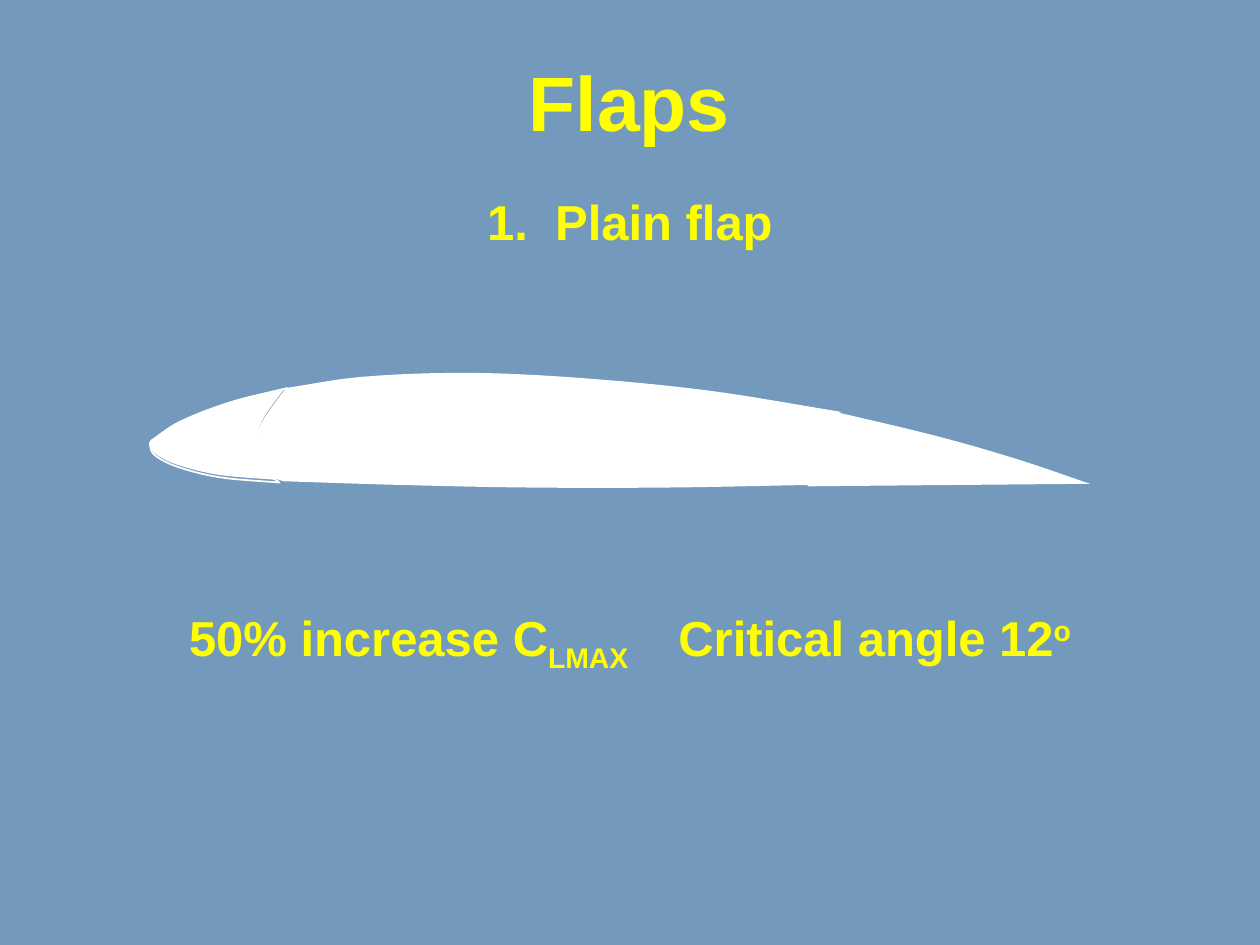
from pptx import Presentation
from pptx.util import Inches, Pt
from pptx.dml.color import RGBColor
from pptx.enum.text import PP_ALIGN as Align, MSO_AUTO_SIZE as Auto

BLUE, WHITE, YELLOW = "739ABC", "FFFFFF", "FFFF00"
STEPS = 8  # short lines drawn between two knots of a curve
color = RGBColor.from_string

deck = Presentation()
deck.slide_width, deck.slide_height = Inches(10), Inches(7.5)
slide = deck.slides.add_slide(deck.slide_layouts[6])
slide.background.fill.solid()
slide.background.fill.fore_color.rgb = color(BLUE)


def curve(knots):
    """Points on a smooth Catmull-Rom curve that passes through the knots."""
    # Mirror the second knot at each end, so the end spans have neighbours
    first = [2 * a - b for a, b in zip(knots[0], knots[1])]
    last = [2 * a - b for a, b in zip(knots[-1], knots[-2])]
    chain = [first, *knots, last]
    points = []
    for span in zip(chain, chain[1:], chain[2:], chain[3:]):
        for step in range(STEPS):
            t = step / STEPS
            points.append([
                b + t * (c - a) / 2
                + t ** 2 * (2 * a - 5 * b + 4 * c - d) / 2
                + t ** 3 * (3 * b - a - 3 * c + d) / 2
                for a, b, c, d in zip(*span)
            ])
    return points + [knots[-1]]


def label(left, top, width, height, size, parts, wrap=True):
    """Centred yellow text; each part is a text with its run attributes."""
    box = slide.shapes.add_textbox(Inches(left), Inches(top), Inches(width), Inches(height))
    frame = box.text_frame
    frame.word_wrap = wrap
    frame.auto_size = Auto.SHAPE_TO_FIT_TEXT
    para = frame.paragraphs[0]
    para.alignment = Align.CENTER
    for text, marks in parts:
        run = para.add_run()
        run.text = text
        font = run.font
        font.name, font.size, font.bold = "Arial", Pt(size), True
        font.color.rgb = color(YELLOW)
        for key, value in marks.items():
            font._element.set(key, value)
    return para


# Nose: upper skin, rounded joint to the body, lower skin
nose_top = [(1.2, 3.49), (1.43, 3.34), (1.82, 3.19), (2.26, 3.08)]
nose_joint = [(2.26, 3.08), (2.08, 3.34), (2.02, 3.57), (2.07, 3.71), (2.2, 3.81)]
nose_low = [(2.2, 3.81), (1.74, 3.77), (1.41, 3.69), (1.23, 3.6), (1.19, 3.52), (1.2, 3.49)]
nose = curve(nose_top) + curve(nose_joint) + curve(nose_low)

# Rim: the nose stretched a little from its top left corner
left, top = 1.19, 3.08
wide, high = 1.09 / 1.07, 0.75 / 0.73
rim = [(left + (x - left) * wide, top + (y - top) * high) for x, y in nose]

# Body: upper skin, hollow for the flap, lower skin, front face
body_top = [(2.27, 3.08), (2.89, 2.99), (3.72, 2.96), (4.6, 3), (5.62, 3.1), (6.68, 3.27)]
body_back = [(6.68, 3.27), (6.42, 3.37), (6.29, 3.6), (6.4, 3.85)]
body_low = [(6.4, 3.85), (5.3, 3.87), (4.2, 3.87), (3.2, 3.85), (2.25, 3.82)]
body_front = [(2.25, 3.82), (2.07, 3.75), (2.01, 3.58), (2.08, 3.35), (2.27, 3.08)]
body = curve(body_top) + curve(body_back) + curve(body_low) + curve(body_front)

# Flap: upper skin down to the tail, flat lower skin, rounded hinge
flap_top = [(6.55, 3.25), (7.43, 3.46), (8.09, 3.65), (8.65, 3.84)]
flap_low = [(8.65, 3.84), (7.5, 3.85), (6.42, 3.86)]
flap_hinge = [(6.42, 3.86), (6.29, 3.77), (6.25, 3.64), (6.32, 3.4), (6.55, 3.25)]
flap = curve(flap_top) + curve(flap_low) + curve(flap_hinge)

# Draw the wing: solid parts, and the rim as a thin line
for part in (body, nose, rim, flap):
    dots = [(Inches(x), Inches(y)) for x, y in part]
    pen = slide.shapes.build_freeform(*dots[0])
    pen.add_line_segments(dots[1:], close=True)
    shape = pen.convert_to_shape()
    shape.shadow.inherit = False
    if part is rim:
        shape.fill.background()
        shape.line.color.rgb = color(WHITE)
        shape.line.width = Pt(1)
    else:
        shape.fill.solid()
        shape.fill.fore_color.rgb = color(WHITE)
        shape.line.fill.background()

# Title, flap type and figures
title = label(4.09, 0.47, 1.81, 0.76, 44, [("Flaps", {})], wrap=False)
title.line_spacing = 0.9
label(0, 1.47, 10, 0.57, 28, [("1.  Plain flap", {})])
label(0, 4.77, 10, 0.57, 28, [
    ("50% increase C", {}),
    ("LMAX", {"baseline": "-25000"}),
    (" ", {"spc": "2080"}),  # one widened space parts the two figures
    ("Critical angle 12", {}),
    ("o", {"baseline": "30000"}),
])

deck.save("out.pptx")
